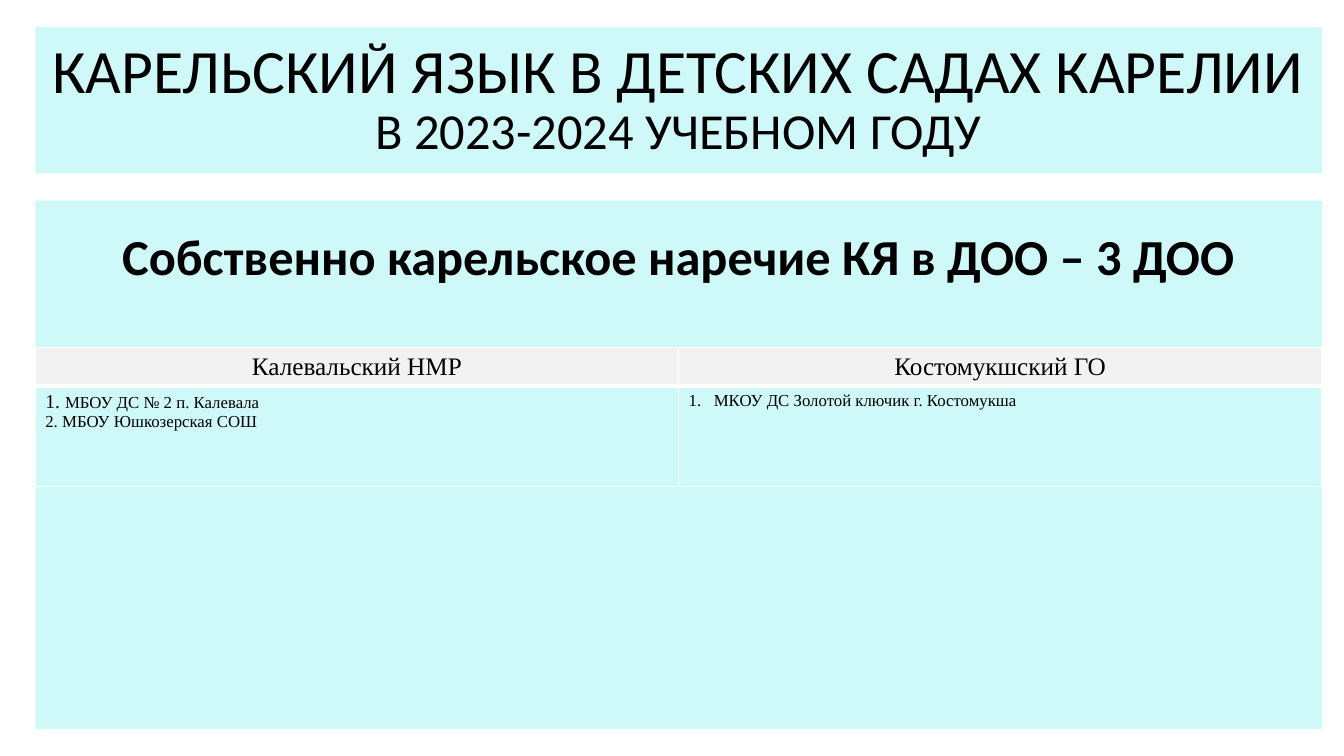
from lxml import etree
from pptx import Presentation
from pptx import util as u
from pptx.dml.color import RGBColor
from pptx.enum import text
from pptx.oxml import ns

COLORS = {"panel": "CFF8F9", "header": "F2F2F2", "ink": "000000", "border": "FFFFFF"}
ALIGN = text.PP_ALIGN


class SlideBuilder:
    sans, serif = "Calibri", "Times New Roman"

    def __init__(self, deck):
        self.slide = deck.slides.add_slide(deck.slide_layouts[1])

    def fill(self, target, color):
        target.fill.solid()
        target.fill.fore_color.rgb = RGBColor.from_string(COLORS[color])

    def add_words(self, paragraph, words, **style):
        run = paragraph.add_run()
        run.text = words
        for attribute, value in style.items():
            setattr(run.font, attribute, value)
        run.font.color.rgb = RGBColor.from_string(COLORS["ink"])

    def panel(self, placeholder, left, top, width, height, **frame_format):
        """Place a filled placeholder and return its first paragraph."""
        box = dict(left=left, top=top, width=width, height=height)
        for side, inches in box.items():
            setattr(placeholder, side, u.Inches(inches))
        self.fill(placeholder, "panel")
        frame = placeholder.text_frame
        frame_format = dict(word_wrap=True, auto_size=text.MSO_AUTO_SIZE.NONE, **frame_format)
        for attribute, value in frame_format.items():
            setattr(frame, attribute, value)
        paragraph = frame.paragraphs[0]
        paragraph.alignment, paragraph.line_spacing = ALIGN.CENTER, 0.9
        paragraph.space_before = u.Pt(0)
        return paragraph

    def bullet(self, paragraph, kind, indent=0, **attributes):
        properties = paragraph._p.get_or_add_pPr()
        properties.set("marL", str(u.Inches(indent)))
        properties.set("indent", str(-u.Inches(indent)))
        etree.SubElement(properties, ns.qn(f"a:{kind}"), attributes)

    def borders(self, cell, bottom):
        properties = cell._tc.get_or_add_tcPr()
        widths = {"lnL": 1, "lnR": 1, "lnT": 1, "lnB": bottom}
        for position, (side, points) in enumerate(widths.items()):
            line = etree.Element(ns.qn(f"a:{side}"), w=str(u.Pt(points)))
            solid = etree.SubElement(line, ns.qn("a:solidFill"))
            etree.SubElement(solid, ns.qn("a:srgbClr"), val=COLORS["border"])
            properties.insert(position, line)

    def table(self, left, top, width, row_heights, columns):
        """Add a table with a header row and return it."""
        height = sum(row_heights)
        frame = self.slide.shapes.add_table(
            len(row_heights), columns, *map(u.Inches, (left, top, width, height)))
        grid = frame.table
        for row_index, row_height in enumerate(row_heights):
            grid.rows[row_index].height = u.Inches(row_height)
            for cell in grid.rows[row_index].cells:
                self.fill(cell, "panel" if row_index else "header")
                self.borders(cell, bottom=1 if row_index else 3)
        return grid


def main():
    deck = Presentation()
    deck.slide_width, deck.slide_height = u.Inches(13.33), u.Inches(7.5)
    builder = SlideBuilder(deck)
    heading, body = builder.slide.placeholders
    left, width = 0.35, 12.76

    # Title
    title = builder.panel(heading, left, 0.27, width, 1.45,
                          vertical_anchor=text.MSO_ANCHOR.MIDDLE)
    builder.add_words(title, "КАРЕЛЬСКИЙ ЯЗЫК В ДЕТСКИХ САДАХ КАРЕЛИИ",
                      size=u.Pt(44), name=builder.sans)
    title.add_line_break()
    builder.add_words(title, "В 2023-2024 УЧЕБНОМ ГОДУ", size=u.Pt(36), name=builder.sans)

    # Dialect heading
    dialect = builder.panel(body, left, 1.99, width, 5.24, margin_top=u.Inches(0.31),
                            vertical_anchor=text.MSO_ANCHOR.TOP)
    builder.bullet(dialect, "buNone")
    builder.add_words(dialect, "Собственно карельское наречие КЯ в ДОО – 3 ДОО",
                      size=u.Pt(36), name=builder.sans, bold=True)

    # Districts
    districts = ["Калевальский НМР", "Костомукшский ГО"]
    kindergartens = builder.table(left, 3.45, width, [0.38, 1], len(districts))
    for column, district in enumerate(districts):
        name = kindergartens.cell(0, column).text_frame.paragraphs[0]
        name.alignment = ALIGN.CENTER
        builder.add_words(name, district, size=u.Pt(18), name=builder.serif, bold=False)

    # Kindergartens of each district
    small = dict(size=u.Pt(12), name=builder.serif)
    kalevala = kindergartens.cell(1, 0).text_frame
    first, second = kalevala.paragraphs[0], kalevala.add_paragraph()
    first.alignment = second.alignment = ALIGN.JUSTIFY
    builder.add_words(first, "1. ", size=u.Pt(14), name=builder.serif)
    builder.add_words(first, "МБОУ ДС № 2 п. Калевала", **small)
    builder.add_words(second, "2. МБОУ Юшкозерская СОШ", **small)

    kostomuksha = kindergartens.cell(1, 1).text_frame.paragraphs[0]
    builder.bullet(kostomuksha, "buAutoNum", indent=0.25, type="arabicPeriod")
    builder.add_words(kostomuksha, "МКОУ ДС Золотой ключик г. Костомукша", **small)

    deck.save("out.pptx")


if __name__ == "__main__":
    main()
